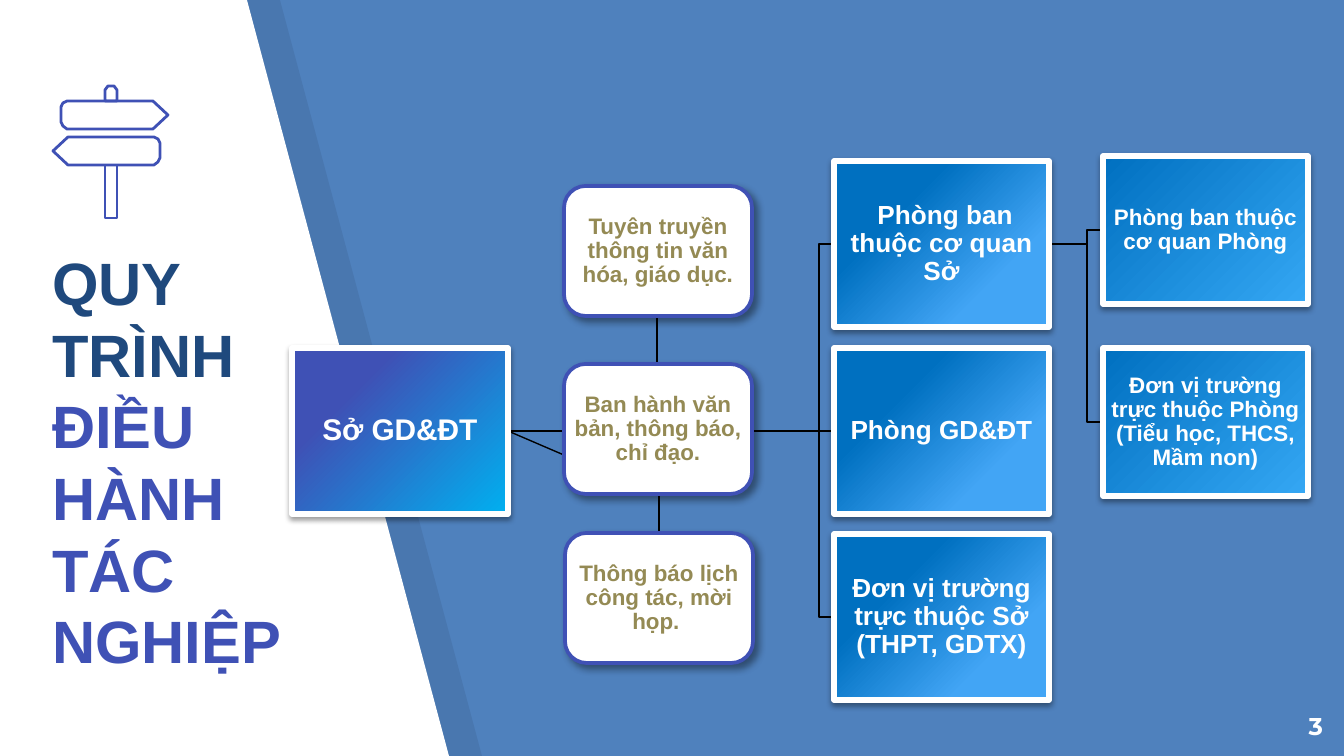
from dataclasses import dataclass

from lxml.etree import SubElement
from pptx import Presentation
from pptx.dml.color import RGBColor
from pptx.enum.shapes import MSO_CONNECTOR, MSO_SHAPE
from pptx.enum.text import MSO_ANCHOR, MSO_AUTO_SIZE, PP_ALIGN
from pptx.oxml.ns import qn
from pptx.util import Inches, Pt

SCALE = Inches(10) / 1344


@dataclass(frozen=True)
class Theme:
    """Colours, fonts and type sizes of the slide."""
    background: str = "4F81BD"
    white: str = "FFFFFF"
    black: str = "000000"
    navy: str = "1F497D"
    indigo: str = "3F51B5"
    olive: str = "948A54"
    root: tuple = ((27, "3F51B5"), (100, "00B0F0"))
    office: tuple = ((30, "0070C0"), (74, "42A5F5"))
    unit: tuple = ((0, "0070C0"), (100, "35A7F4"))
    font: str = "Arial"
    number_font: str = "Montserrat"
    title_size: int = 32
    root_size: int = 16
    office_size: int = 14
    small_size: int = 12
    number_size: int = 13


THEME = Theme()


def px(*lengths):
    """Turn pixel lengths into EMU."""
    return [round(length * SCALE) for length in lengths]


def rgb(colour):
    """Turn a hex string into a colour."""
    return RGBColor.from_string(colour)


def set_line(shape, colour, width):
    """Give a shape or connector its outline."""
    shape.line.color.rgb = rgb(colour)
    shape.line.width = Pt(width)


def set_frame(box, inset, anchor):
    """Set wrapping, insets and anchor, and return the first paragraph."""
    frame = box.text_frame
    frame.word_wrap = True
    frame.auto_size = MSO_AUTO_SIZE.NONE
    frame.vertical_anchor = anchor
    (margin,) = px(inset)
    frame.margin_left = frame.margin_right = margin
    frame.margin_top = frame.margin_bottom = margin
    return frame.paragraphs[0]


def add_span(para, text, size, colour, font=THEME.font):
    """Add one bold run to a paragraph."""
    span = para.add_run()
    span.text = text
    span.font.name = font
    span.font.size = Pt(size)
    span.font.bold = True
    span.font.color.rgb = rgb(colour)


def add_shadow(shape, blur, distance, angle, opacity):
    """Give a shape a soft black outer shadow."""
    shape.shadow.inherit = False
    effects = shape._element.spPr.find(qn("a:effectLst"))
    shadow = SubElement(effects, qn("a:outerShdw"), blurRad=str(Pt(blur)),
                        dist=str(Pt(distance)), dir=str(angle * 60000),
                        algn="ctr", rotWithShape="0")
    colour = SubElement(shadow, qn("a:srgbClr"), val=THEME.black)
    SubElement(colour, qn("a:alpha"), val=str(opacity * 1000))


def add_outline(page, points, closed=True):
    """Draw an unfilled freeform through the points."""
    builder = page.shapes.build_freeform(*points[0], scale=SCALE)
    builder.add_line_segments(points[1:], close=closed)
    shape = builder.convert_to_shape()
    shape.shadow.inherit = False
    shape.fill.background()
    return shape


def add_panel(page, shift, colour, opacity=100):
    """Draw the slanted panel along the left edge."""
    points = [(0, 0), (0, 756), (449 + shift, 756), (247 + shift, 0)]
    panel = add_outline(page, points)
    panel.fill.solid()
    panel.fill.fore_color.rgb = rgb(colour)
    panel.line.fill.background()
    if opacity < 100:
        tint = panel._element.spPr.find(qn("a:solidFill"))[0]
        SubElement(tint, qn("a:alpha"), val=str(opacity * 1000))


def add_link(page, *points):
    """Join points with a thin straight or bent line."""
    if len(points) == 2:
        start, end = points
        link = page.shapes.add_connector(MSO_CONNECTOR.STRAIGHT, *px(*start, *end))
        SubElement(link._element.spPr, qn("a:effectLst"))
    else:
        link = add_outline(page, points, closed=False)
    set_line(link, THEME.black, 0.75)


def add_label(box, text, size, colour, inset):
    """Centre a label inside a box."""
    para = set_frame(box, inset, MSO_ANCHOR.MIDDLE)
    para.alignment = PP_ALIGN.CENTER
    para.line_spacing = 0.9
    add_span(para, text, size, colour)


def add_unit(page, place, text, stops, size):
    """Add a gradient box for an organisation."""
    box = page.shapes.add_shape(MSO_SHAPE.RECTANGLE, *px(*place))
    box.fill.gradient()
    box.fill.gradient_angle = 315
    for stop, (position, colour) in zip(box.fill.gradient_stops, stops):
        stop.position = position / 100
        stop.color.rgb = rgb(colour)
    set_line(box, THEME.white, 3)
    add_shadow(box, 3.1, 1.6, 90, 38)
    add_label(box, text, size, THEME.white, 4)


def add_task(page, left, top, text):
    """Add a rounded white box for a task."""
    box = page.shapes.add_shape(MSO_SHAPE.ROUNDED_RECTANGLE, *px(left, top, 188, 130))
    box.fill.solid()
    box.fill.fore_color.rgb = rgb(THEME.white)
    set_line(box, THEME.indigo, 2)
    add_shadow(box, 4, 3, 45, 40)
    add_label(box, text, THEME.small_size, THEME.olive, 1)


def add_signpost(page):
    """Draw the signpost icon from two mirrored boards, a cap and a post."""
    board = [(153, 101), (67, 101), (63, 103), (61, 107), (61, 122),
             (63, 126), (67, 129), (153, 129), (168, 115)]
    mirrored = [(221 - x, y + 36) for x, y in board]
    cap = [(117, 101), (117, 90), (114, 86), (108, 86), (105, 90), (105, 101)]
    post = [(105, 165), (105, 218), (117, 218), (117, 165)]
    for points in (board, mirrored, cap, post):
        set_line(add_outline(page, points), THEME.indigo, 1.5)


def add_title(page):
    """Fill the title placeholder and bring it in front of the panels."""
    title = page.shapes.title
    page.shapes._spTree.append(title._element)
    title.left, title.top, title.width, title.height = px(39, 618, 269, 71)
    para = set_frame(title, 13, MSO_ANCHOR.BOTTOM)
    para.alignment = PP_ALIGN.LEFT
    add_span(para, "QUY TRÌNH ", THEME.title_size, THEME.navy)
    add_span(para, "ĐIỀU HÀNH TÁC NGHIỆP", THEME.title_size, THEME.indigo)


def add_page_number(page):
    """Add the page number at the lower right."""
    box = page.shapes.add_textbox(*px(1255, 698, 81, 58))
    para = set_frame(box, 13, MSO_ANCHOR.TOP)
    para.alignment = PP_ALIGN.RIGHT
    add_span(para, "3", THEME.number_size, THEME.white, THEME.number_font)


def add_links(page):
    """Draw all lines of the process."""
    root, office = (508, 431), (1050, 244)
    add_link(page, root, (659, 431), (659, 533))
    add_link(page, root, (657, 431), (657, 316))
    add_link(page, root, (657, 495))
    add_link(page, root, (834, 431))
    for y in (244, 617):
        add_link(page, root, (819, 431), (819, y), (834, y))
    for y in (230, 422):
        add_link(page, office, (1087, 244), (1087, y), (1103, y))


def main():
    """Build the slide and save the deck."""
    deck = Presentation()
    deck.slide_width, deck.slide_height = px(1344, 756)
    page = deck.slides.add_slide(deck.slide_layouts[5])
    page.background.fill.solid()
    page.background.fill.fore_color.rgb = rgb(THEME.background)
    add_panel(page, 33, THEME.black, 7)
    add_panel(page, 0, THEME.white)
    add_page_number(page)
    add_title(page)
    add_links(page)
    add_unit(page, (292, 348, 216, 166), "Sở GD&ĐT", THEME.root, THEME.root_size)
    offices = (" Phòng ban thuộc cơ quan Sở", "Phòng GD&ĐT",
               "Đơn vị trường trực thuộc Sở (THPT, GDTX)")
    for top, text in zip((161, 348, 534), offices):
        add_unit(page, (834, top, 215, 166), text, THEME.office, THEME.office_size)
    units = ("Phòng ban thuộc cơ quan Phòng",
             "Đơn vị trường trực thuộc Phòng (Tiểu học, THCS, Mầm non)")
    for top, text in zip((156, 348), units):
        add_unit(page, (1103, top, 205, 148), text, THEME.unit, THEME.small_size)
    add_task(page, 564, 186, "Tuyên truyền thông tin văn hóa, giáo dục.")
    add_task(page, 564, 364, "Ban hành văn bản, thông báo, chỉ đạo.")
    add_task(page, 565, 533, "Thông báo lịch công tác, mời họp. ")
    add_signpost(page)
    deck.save("out.pptx")


if __name__ == "__main__":
    main()
